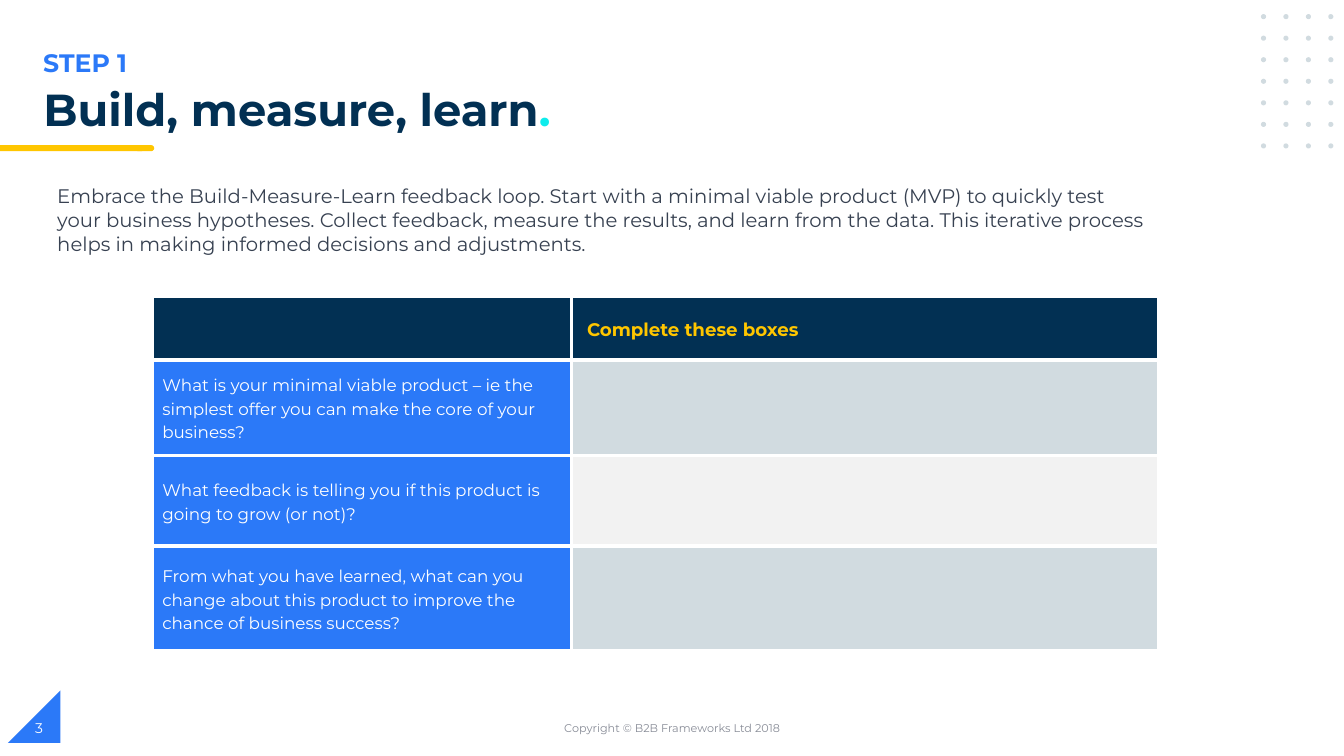
from lxml import etree
from pptx import Presentation, util as u
from pptx.dml.color import RGBColor
from pptx.enum import shapes, text
from pptx.oxml.ns import qn

WIDE, HIGH = u.Inches(13.33), u.Inches(7.5)
FONT = "Montserrat"
KIND = shapes.MSO_SHAPE
MID = text.MSO_ANCHOR.MIDDLE
HUE = {
    "navy": "023053", "blue": "2B79F8", "gold": "FFC600", "cyan": "0EECEC",
    "mist": "D1DBE0", "pale": "F2F2F2", "white": "FFFFFF", "grey": "888C97",
    "ink": "374151",
}
ASKS = [
    "What is your minimal viable product – ie the simplest offer you can make "
    "the core of your business?",
    "What feedback is telling you if this product is going to grow (or not)?",
    "From what you have learned, what can you change about this product to "
    "improve the chance of business success?",
]
INTRO = (
    "Embrace the Build-Measure-Learn feedback loop. Start with a minimal viable "
    "product (MVP) to quickly test your business hypotheses. Collect feedback, "
    "measure the results, and learn from the data. This iterative process helps "
    "in making informed decisions and adjustments."
)


def tint(hue):
    return RGBColor.from_string(HUE[hue])


def across(share):
    """Length as a percentage of the slide's width."""
    return u.Emu(round(WIDE * share / 100))


def down(share):
    """Length as a percentage of the slide's height."""
    return u.Emu(round(HIGH * share / 100))


def area(left, top, width, height):
    return across(left), down(top), across(width), down(height)


def style(run, size, hue, bold=False):
    font = run.font
    font.name, font.size, font.bold = FONT, u.Pt(size), bold
    font.color.rgb = tint(hue)


def add_shape(slide, kind, box, hue):
    shape = slide.shapes.add_shape(kind, *area(*box))
    shape.shadow.inherit = False
    shape.fill.solid()
    shape.fill.fore_color.rgb = tint(hue)
    shape.line.fill.background()
    return shape


def add_label(slide, box, words, size, hue, bold=False, anchor=None, align=None):
    frame = slide.shapes.add_textbox(*area(*box)).text_frame
    frame.word_wrap = True
    frame.vertical_anchor = anchor
    frame.text = words
    para = frame.paragraphs[0]
    para.alignment = align
    style(para.runs[0], size, hue, bold)


def add_dots(slide, cols, rows):
    for row in range(rows):
        for col in range(cols):
            box = (93.82 + col * 1.67, 1.87 + row * 2.85, 0.38, 0.67)
            add_shape(slide, KIND.OVAL, box, "mist")


def set_title(slide, box, words, stop):
    title = slide.shapes.title
    title.left, title.top, title.width, title.height = area(*box)
    frame = title.text_frame
    frame.auto_size = text.MSO_AUTO_SIZE.NONE
    frame.vertical_anchor = text.MSO_ANCHOR.TOP
    frame.text = words
    para = frame.paragraphs[0]
    para.alignment = text.PP_ALIGN.LEFT
    para.line_spacing = 0.9
    para.add_run().text = stop
    for run, hue in zip(para.runs, ("navy", "cyan")):
        style(run, 32, hue, True)


def add_edges(cell, hue, width):
    props = cell._tc.get_or_add_tcPr()
    for side in ("a:lnL", "a:lnR", "a:lnT", "a:lnB"):
        line = etree.SubElement(props, qn(side), w=str(u.Pt(width)))
        fill = etree.SubElement(line, qn("a:solidFill"))
        etree.SubElement(fill, qn("a:srgbClr"), val=HUE[hue])


def fill_cell(cell, fill, words, size, hue, bold, inset):
    add_edges(cell, "white", 3)
    cell.fill.solid()
    cell.fill.fore_color.rgb = tint(fill)
    cell.vertical_anchor = MID
    cell.margin_top = cell.margin_bottom = 0
    cell.margin_left = across(inset)
    if words:
        cell.text = words
        para = cell.text_frame.paragraphs[0]
        para.line_spacing = 1.15
        style(para.runs[0], size, hue, bold)


def add_form(slide, left, top, widths, heights):
    box = area(left, top, sum(widths), sum(heights))
    form = slide.shapes.add_table(len(heights), len(widths), *box).table
    form.first_row = form.horz_banding = False
    for col, width in zip(form.columns, widths):
        col.width = across(width)
    for row, height in zip(form.rows, heights):
        row.height = down(height)
    # Header row
    heads = ("", "Complete these boxes")
    for col, words in enumerate(heads):
        fill_cell(form.cell(0, col), "navy", words, 13, "gold", True, 1.15)
    # Question rows with an empty answer box
    for row, ask in enumerate(ASKS, 1):
        fill_cell(form.cell(row, 0), "blue", ask, 12, "white", False, 0.75)
        shade = "mist" if row % 2 else "pale"
        fill_cell(form.cell(row, 1), shade, "", 12, "ink", False, 0.75)


def main():
    deck = Presentation()
    deck.slide_width, deck.slide_height = WIDE, HIGH
    slide = deck.slides.add_slide(deck.slide_layouts[5])

    # Decoration
    corner = add_shape(slide, KIND.RIGHT_TRIANGLE, (0.6, 91.33, 3.9, 6.93), "blue")
    corner._element.spPr.find(qn("a:xfrm")).set("flipH", "1")
    add_shape(slide, KIND.FLOWCHART_TERMINATOR, (10.05, 19.2, 1.43, 0.8), "gold")
    add_shape(slide, KIND.RECTANGLE, (0, 19.2, 10.58, 0.8), "gold")
    add_dots(slide, 4, 7)

    # Heading and introduction
    add_label(slide, (2.48, 5.6, 50.18, 5.33), "STEP 1", 18, "blue", bold=True)
    set_title(slide, (2.48, 10.93, 58.2, 5.33), "Build, measure, learn", ".")
    add_label(slide, (3.52, 23.73, 82.73, 10.8), INTRO, 14, "ink")

    # Worksheet
    add_form(slide, 11.33, 39.2, (31.2, 43.73), (8.4, 12.67, 12, 13.87))

    # Footer
    add_label(slide, (33.15, 93.6, 33.75, 5.33), "Copyright © B2B Frameworks Ltd 2018",
              8, "grey", anchor=MID, align=text.PP_ALIGN.CENTER)
    add_label(slide, (1.88, 93.6, 22.5, 5.33), "3", 10, "white", anchor=MID)

    deck.save("out.pptx")


if __name__ == "__main__":
    main()
